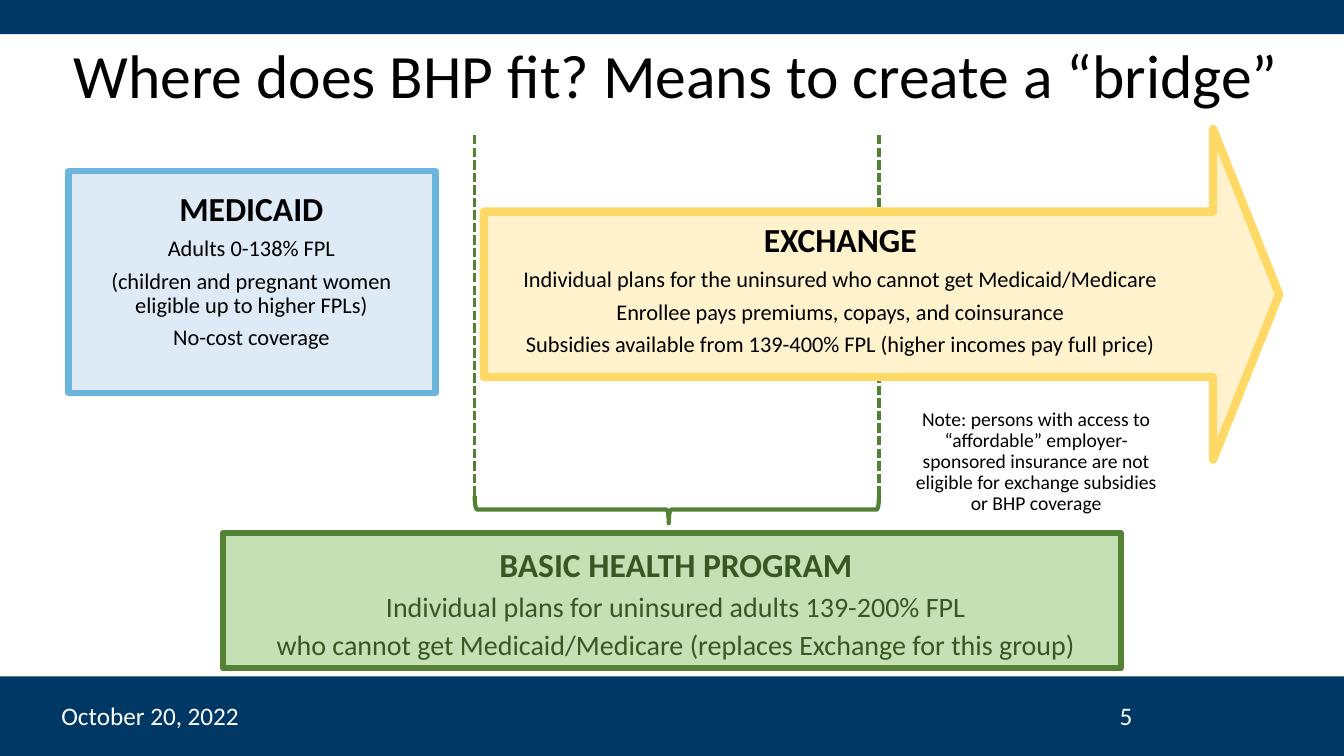
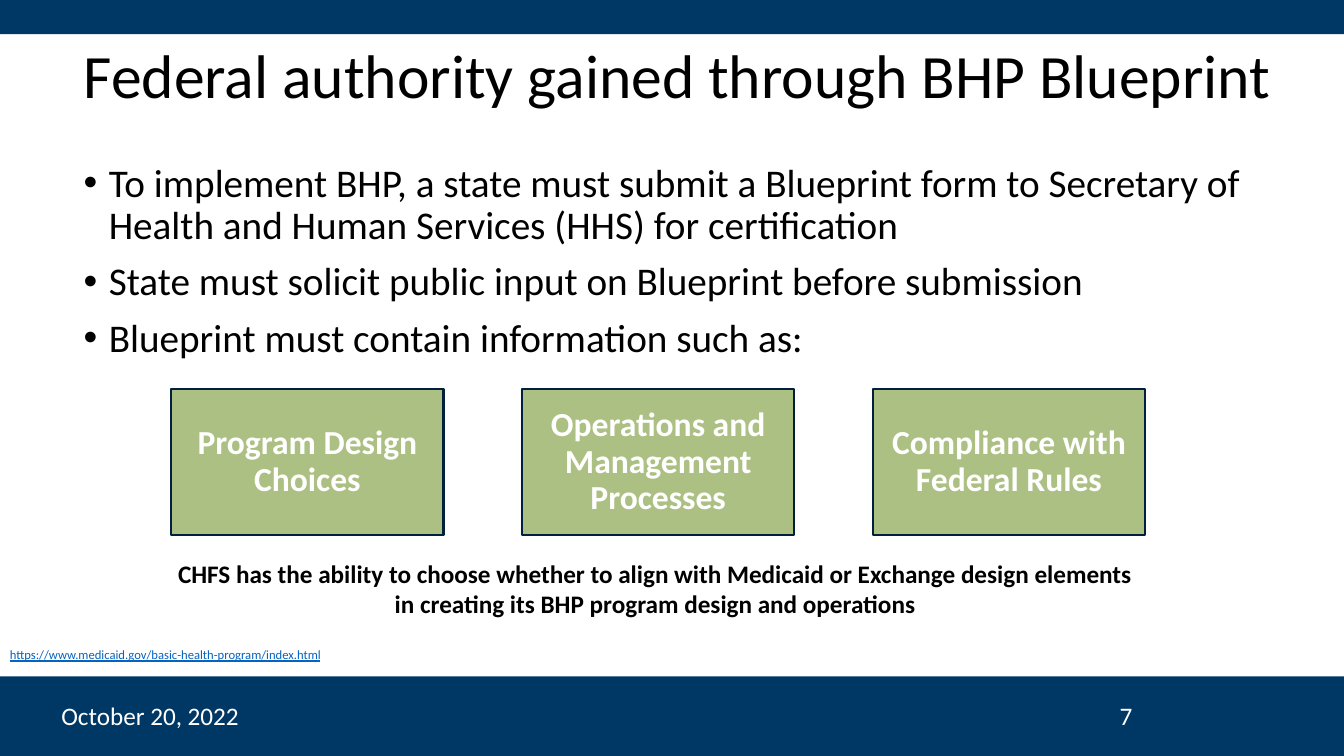
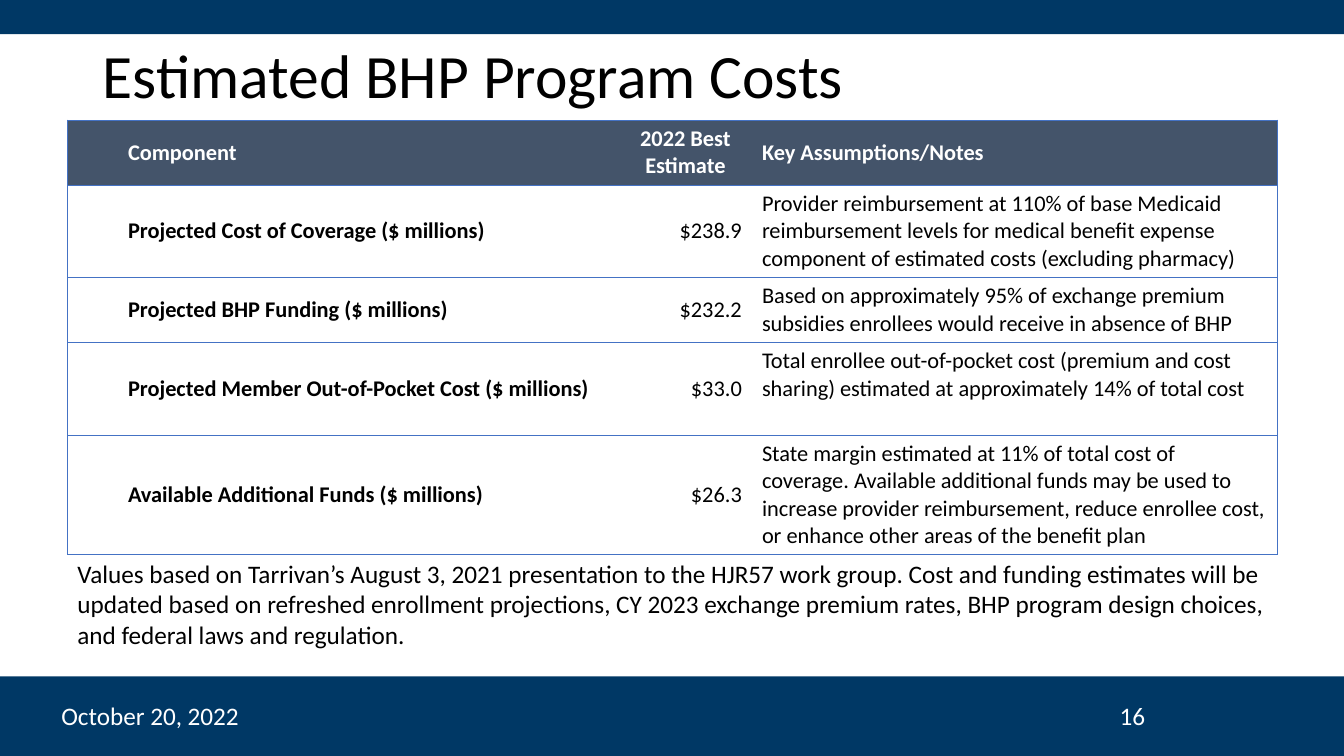
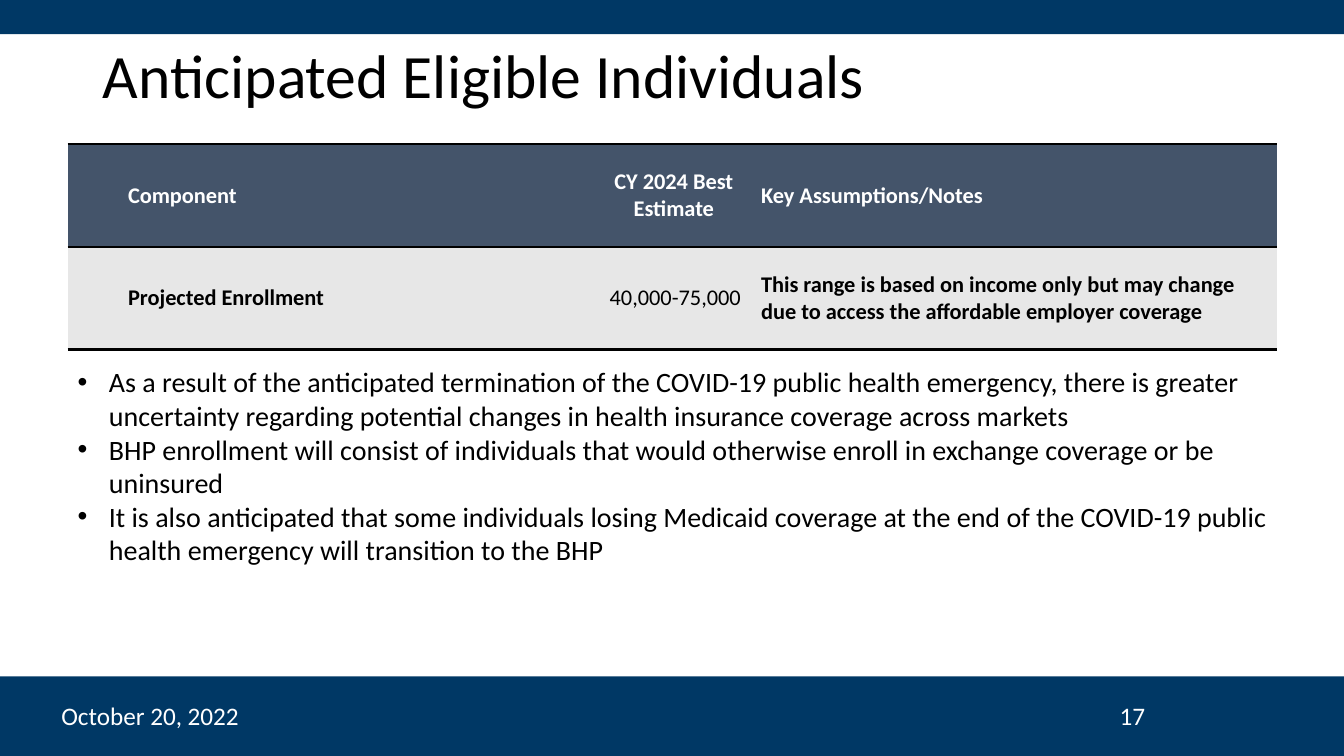
"""Builds four slides on the Basic Health Program."""
import dataclasses

import lxml.etree
import pptx
import pptx.dml.color
import pptx.enum.dml
import pptx.enum.shapes
import pptx.enum.text
import pptx.oxml.ns
import pptx.util

SHAPE = pptx.enum.shapes.MSO_SHAPE
ALIGN = pptx.enum.text.PP_ALIGN
ANCHOR = pptx.enum.text.MSO_ANCHOR
COLORS = {
    "navy": "003865", "white": "FFFFFF", "black": "000000", "link": "0563C1",
    "sky": "DEEBF7", "sky_line": "6BB5DD", "sand": "FFF2CC", "gold": "FFD966",
    "mint": "C5E0B4", "green": "548235", "forest": "385723",
    "sage": "ADC084", "ink": "01203D",
    "slate": "44546A", "grey": "E7E7E7", "blue": "4472C4",
}
FONT = "Calibri"
UNIT = 0.1
DATE = "October 20, 2022"


@dataclasses.dataclass
class Area:
    """A rectangle counted in columns and rows of the slide grid."""
    left: float
    top: float
    width: float
    height: float

    def inner(self, column, row, width, height):
        """Return an area placed relative to this one."""
        return Area(self.left + column, self.top + row, width, height)

    def lengths(self):
        """Return left, top, width and height as slide lengths."""
        return [grid(size) for size in dataclasses.astuple(self)]


SLIDE = Area(0, 0, 133.33, 75)
TOP_BAND = SLIDE.inner(0, 0, SLIDE.width, 3.4)
FOOTER = SLIDE.inner(0, 67.1, SLIDE.width, 7.9)
CONTENT = SLIDE.inner(6.7, 11.9, 120, 54)


def grid(units):
    """Turn grid units into a slide length."""
    return pptx.util.Inches(units * UNIT)


def rgb(name):
    """Return a colour of the palette."""
    return pptx.dml.color.RGBColor.from_string(COLORS[name])


def child(parent, tag, **attributes):
    """Add a drawing element to a parent element."""
    return lxml.etree.SubElement(parent, pptx.oxml.ns.qn(tag), attributes)


def add_bullet(para, indent):
    """Give a paragraph a round bullet with a hanging indent."""
    properties = para._p.get_or_add_pPr()
    properties.set("marL", str(grid(indent)))
    properties.set("indent", str(-grid(indent)))
    child(properties, "a:buFont", typeface="Arial")
    child(properties, "a:buChar", char="•")


def write(frame, *lines, size=18, color="black", bold=False, underline=None, align=ALIGN.LEFT,
          anchor=ANCHOR.TOP, spacing=None, before=0, bullet=None, margins=None):
    """Fill a text frame; a line is a text or a text with its own format."""
    frame.word_wrap = True
    frame.auto_size = pptx.enum.text.MSO_AUTO_SIZE.NONE
    frame.vertical_anchor = anchor
    if margins:
        (frame.margin_left, frame.margin_top,
         frame.margin_right, frame.margin_bottom) = map(grid, margins)
    for index, line in enumerate(lines):
        text, own = (line, {}) if isinstance(line, str) else line
        para = frame.add_paragraph() if index else frame.paragraphs[0]
        if bullet:
            add_bullet(para, bullet)
        para.alignment = align
        para.line_spacing = spacing
        para.space_before = pptx.util.Pt(before if index else 0)
        span = para.add_run()
        span.text = text
        span.font.name = FONT
        span.font.size = pptx.util.Pt(own.get("size", size))
        span.font.bold = own.get("bold", bold)
        span.font.underline = underline
        span.font.color.rgb = rgb(color)


def add_text(page, area, *lines, **style):
    """Add a text box."""
    write(page.shapes.add_textbox(*area.lengths()).text_frame, *lines, **style)


def add_panel(page, area, kind=SHAPE.RECTANGLE, fill=None, line=None, weight=1, adjust=()):
    """Add a preset shape without shadow."""
    panel = page.shapes.add_shape(kind, *area.lengths())
    panel.shadow.inherit = False
    for index, value in enumerate(adjust):
        panel.adjustments[index] = value
    if fill:
        panel.fill.solid()
        panel.fill.fore_color.rgb = rgb(fill)
    else:
        panel.fill.background()
    if line:
        panel.line.color.rgb = rgb(line)
        panel.line.width = pptx.util.Pt(weight)
    else:
        panel.line.fill.background()
    return panel


def add_dashed_line(page, column, top, bottom):
    """Add a vertical dashed line."""
    rule = page.shapes.add_connector(
        pptx.enum.shapes.MSO_CONNECTOR.STRAIGHT,
        *map(grid, (column, top, column, bottom)))
    rule.line.color.rgb = rgb("green")
    rule.line.width = pptx.util.Pt(2.25)
    rule.line.dash_style = pptx.enum.dml.MSO_LINE.SQUARE_DOT
    child(rule._element.spPr, "a:effectLst")


def add_bands(deck, page):
    """Put the top and bottom bands on the slide master."""
    tree = deck.slide_master.shapes.element
    for number, area in enumerate((TOP_BAND, FOOTER), 20):
        band = add_panel(page, area, fill="navy").element
        band.nvSpPr.cNvPr.set("id", str(number))
        tree.insert(2, band)


def add_page(deck, layout, title, number, left=9.2, width=115):
    """Add a page with its title and footer."""
    page = deck.slides.add_slide(deck.slide_layouts.get_by_name(layout))
    heading = page.shapes.title
    heading.left, heading.top, heading.width, heading.height = SLIDE.inner(
        left, 4, width, 9.3).lengths()
    write(heading.text_frame, title, size=44, spacing=0.9)
    add_text(page, FOOTER.inner(5.1, 1.9, 22.6, 4), DATE, color="white")
    add_text(page, FOOTER.inner(110.1, 1.9, 5.9, 4), str(number), color="white")
    return page


def place_list(page, area, *lines, **style):
    """Move and fill the body placeholder."""
    body = page.placeholders[1]
    body.left, body.top, body.width, body.height = area.lengths()
    write(body.text_frame, *lines, **style)


def add_program(page, area, heading, *lines, margins, size=16, color="black", **look):
    """Add a coverage program: a shape with a heading and its details."""
    panel = add_panel(page, area, **look)
    write(panel.text_frame, (heading, {"size": 24, "bold": True}), *lines, size=size,
          color=color, align=ALIGN.CENTER, spacing=0.9, before=6, margins=margins)


def add_bracket(page, area):
    """Add a brace that lies along the area and points down."""
    upright = area.inner((area.width - area.height) / 2, (area.height - area.width) / 2,
                         area.height, area.width)
    brace = add_panel(page, upright, kind=SHAPE.LEFT_BRACE, line="green", weight=3,
                      adjust=(0.08, 0.48))
    brace.rotation = 270


def add_bridge(page, area):
    """Draw the three programs and the income range that joins them."""
    bracket = area.inner(40.4, 37.3, 40.1, 2.7)
    for column in (bracket.left, bracket.left + bracket.width):
        add_dashed_line(page, column, area.top + 1.5, bracket.top)
    add_program(page, area.inner(15.4, 41, 89.1, 13.4), "BASIC HEALTH PROGRAM",
                "Individual plans for uninsured adults 139-200% FPL",
                "who cannot get Medicaid/Medicare (replaces Exchange for this group)",
                size=20, color="forest", margins=(3.6, 1.5, 2.8, 0),
                fill="mint", line="green", weight=4.5)
    add_program(page, area.inner(0.1, 5.1, 36.4, 22), "MEDICAID",
                "Adults 0-138% FPL",
                "(children and pregnant women eligible up to higher FPLs)",
                "No-cost coverage",
                margins=(1, 2.1, 1.1, 0), fill="sky", line="sky_line", weight=4.5)
    add_program(page, area.inner(41.3, 0.9, 78.9, 32.8), "EXCHANGE",
                "Individual plans for the uninsured who cannot get Medicaid/Medicare",
                "Enrollee pays premiums, copays, and coinsurance",
                "Subsidies available from 139-400% FPL (higher incomes pay full price)",
                margins=(0, 1.2, 4.9, 0), kind=SHAPE.RIGHT_ARROW, adjust=(0.5, 0.2),
                fill="sand", line="gold", weight=6)
    add_bracket(page, bracket)
    add_text(page, area.inner(83.1, 28.7, 26, 10.6),
             "Note: persons with access to “affordable” employer-sponsored insurance are not "
             "eligible for exchange subsidies or BHP coverage",
             size=14, align=ALIGN.CENTER, spacing=0.9, margins=(0, 0, 0, 0))


def add_topics(page, area, topics, width=27):
    """Spread topic boxes evenly over the area."""
    pitch = (area.width - width) / (len(topics) - 1)
    for index, topic in enumerate(topics):
        panel = add_panel(page, area.inner(index * pitch, 0, width, area.height),
                          fill="sage", line="ink", weight=1.5)
        write(panel.text_frame, topic, size=24, bold=True, color="white",
              align=ALIGN.CENTER, anchor=ANCHOR.MIDDLE, spacing=0.9)


def set_borders(cell, sides, color, weight):
    """Line the named sides of a cell and clear the others."""
    properties = cell._tc.get_or_add_tcPr()
    for side in "LRTB":
        edge = child(properties, f"a:ln{side}", w=str(pptx.util.Pt(weight)))
        if side in sides:
            child(child(edge, "a:solidFill"), "a:srgbClr", val=COLORS[color])
        else:
            child(edge, "a:noFill")


def add_estimates(page, area, widths, heights, rows, fill="white", line="blue", weight=0.5,
                  framed=True, bold_notes=False, top_rows=()):
    """Add a table of components, estimates and notes."""
    table = page.shapes.add_table(len(rows), len(widths), *area.lengths()).table
    table.first_row = table.horz_banding = False
    for column, width in zip(table.columns, widths):
        column.width = grid(width)
    for row, height in zip(table.rows, heights):
        row.height = grid(height)
    last = len(widths) - 1
    for r, texts in enumerate(rows):
        for c, text in enumerate(texts):
            cell = table.cell(r, c)
            outer = {0: "L", last: "R"}.get(c, "") if framed else ""
            set_borders(cell, "TB" + outer, line, weight)
            cell.fill.solid()
            cell.fill.fore_color.rgb = rgb(fill if r else "slate")
            cell.margin_left = grid(1 if c else 6)
            estimate = ALIGN.RIGHT if r else ALIGN.CENTER
            write(cell.text_frame, text, size=16, color="black" if r else "white",
                  bold=r == 0 or c == 0 or (c == last and bold_notes),
                  align=estimate if c == 1 else ALIGN.LEFT)
            on_top = c == last and r in top_rows
            cell.vertical_anchor = ANCHOR.TOP if on_top else ANCHOR.MIDDLE


def build_bridge(deck):
    """Build the slide on where the program fits."""
    page = add_page(deck, "Title Only", "Where does BHP fit? Means to create a “bridge”", 5,
                    left=6.3, width=122.7)
    add_bands(deck, page)
    add_bridge(page, CONTENT)


def build_authority(deck):
    """Build the slide on federal authority."""
    page = add_page(deck, "Title and Content",
                    "Federal authority gained through BHP Blueprint", 7, left=7.3, width=122.2)
    place_list(page, CONTENT.inner(0.6, 3.8, 116.9, 21.8),
               "To implement BHP, a state must submit a Blueprint form to Secretary of Health "
               "and Human Services (HHS) for certification",
               "State must solicit public input on Blueprint before submission",
               "Blueprint must contain information such as:",
               size=28, spacing=0.9, before=10, bullet=2.5)
    add_topics(page, CONTENT.inner(10.3, 26.7, 96.6, 14.5),
               ("Program Design Choices", "Operations and Management Processes",
                "Compliance with Federal Rules"))
    add_text(page, CONTENT.inner(9.7, 43, 97.2, 7.1),
             "CHFS has the ability to choose whether to align with Medicaid or Exchange design "
             "elements in creating its BHP program design and operations",
             bold=True, align=ALIGN.CENTER)
    add_text(page, SLIDE.inner(0, 63.7, 66.6, 2.5),
             "https://www.medicaid.gov/basic-health-program/index.html",
             size=9, color="link", underline=True)


def build_costs(deck):
    """Build the slide on program costs."""
    page = add_page(deck, "Title Only", "Estimated BHP Program Costs", 16)
    rows = (
        ("Component", "2022 Best Estimate", "Key Assumptions/Notes"),
        ("Projected Cost of Coverage ($ millions)", "$238.9",
         "Provider reimbursement at 110% of base Medicaid reimbursement levels for medical "
         "benefit expense component of estimated costs (excluding pharmacy)"),
        ("Projected BHP Funding ($ millions)", "$232.2",
         "Based on approximately 95% of exchange premium subsidies enrollees would receive in "
         "absence of BHP"),
        ("Projected Member Out-of-Pocket Cost ($ millions)", "$33.0",
         "Total enrollee out-of-pocket cost (premium and cost sharing) estimated at "
         "approximately 14% of total cost"),
        ("Available Additional Funds ($ millions)", "$26.3",
         "State margin estimated at 11% of total cost of coverage. Available additional funds "
         "may be used to increase provider reimbursement, reduce enrollee cost, or enhance "
         "other areas of the benefit plan"),
    )
    add_estimates(page, CONTENT.inner(0, 0, 120, 43), (54.7, 13.2, 52.1),
                  (6.4, 9.2, 6.4, 9.2, 11.8), rows, top_rows=(3,))
    add_text(page, CONTENT.inner(0, 43, 120, 10.1),
             "Values based on Tarrivan’s August 3, 2021 presentation to the HJR57 work group. "
             "Cost and funding estimates will be updated based on refreshed enrollment "
             "projections, CY 2023 exchange premium rates, BHP program design choices, and "
             "federal laws and regulation.")


def build_eligible(deck):
    """Build the slide on eligible individuals."""
    page = add_page(deck, "Title and Content", "Anticipated Eligible Individuals", 17)
    rows = (
        ("Component", "CY 2024 Best Estimate", "Key Assumptions/Notes"),
        ("Projected Enrollment", "40,000-75,000",
         "This range is based on income only but may change due to access the affordable "
         "employer coverage"),
    )
    add_estimates(page, CONTENT.inner(0, 2.4, 120, 20.4), (52.5, 15.3, 52.2), (10.2, 10.2),
                  rows, fill="grey", line="black", weight=2, framed=False, bold_notes=True)
    place_list(page, CONTENT.inner(0, 23.8, 120, 21.2),
               "As a result of the anticipated termination of the COVID-19 public health "
               "emergency, there is greater uncertainty regarding potential changes in health "
               "insurance coverage across markets",
               "BHP enrollment will consist of individuals that would otherwise enroll in "
               "exchange coverage or be uninsured",
               "It is also anticipated that some individuals losing Medicaid coverage at the "
               "end of the COVID-19 public health emergency will transition to the BHP",
               size=20, bullet=3.1)


def main():
    """Build and save the deck."""
    deck = pptx.Presentation()
    deck.slide_width, deck.slide_height = SLIDE.lengths()[2:]
    for build in (build_bridge, build_authority, build_costs, build_eligible):
        build(deck)
    deck.save("out.pptx")


if __name__ == "__main__":
    main()
